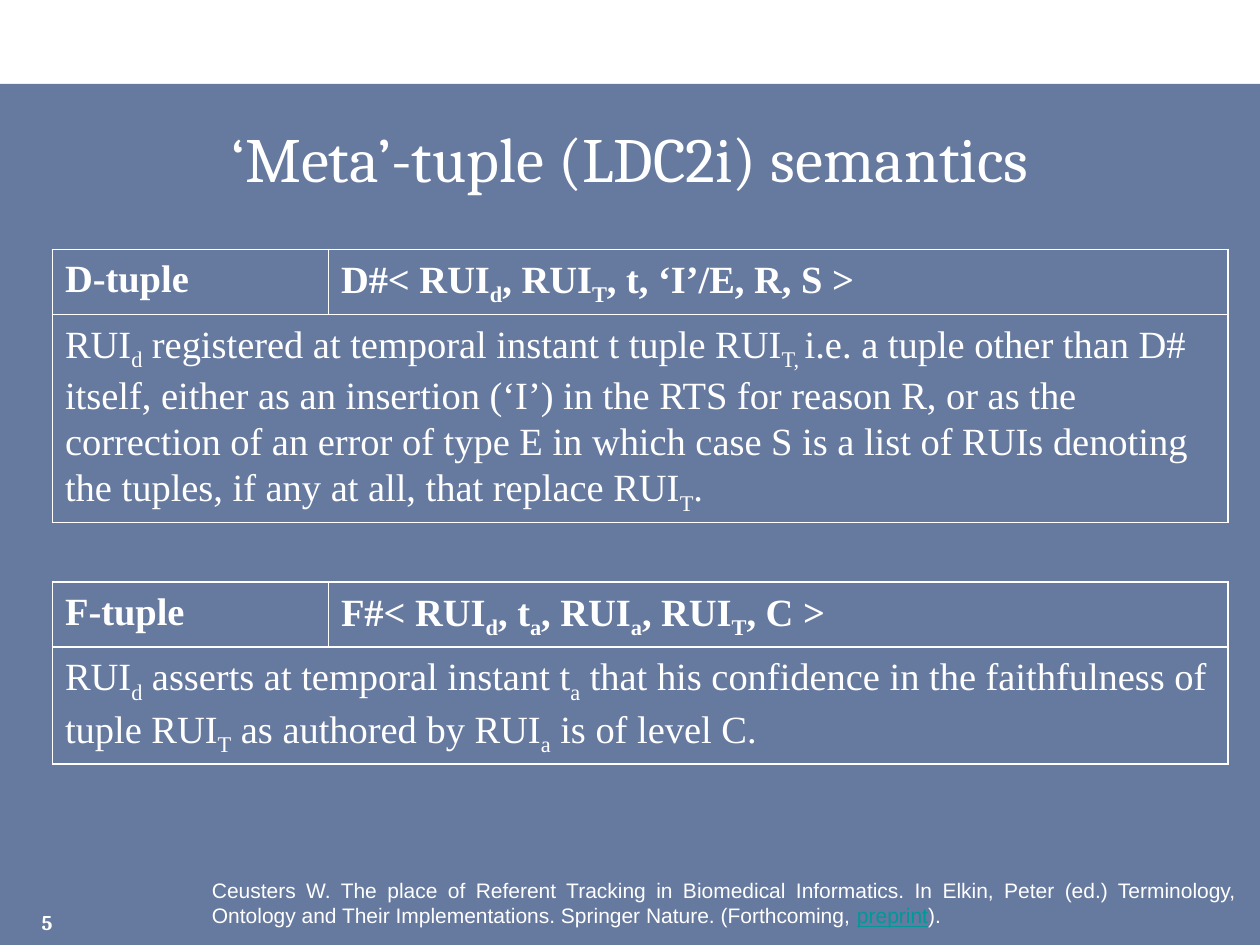
from lxml.etree import SubElement
from pptx import Presentation
from pptx.dml.color import RGBColor
from pptx.enum.shapes import MSO_SHAPE
from pptx.enum.text import MSO_ANCHOR, PP_ALIGN
from pptx.oxml import parse_xml
from pptx.oxml.ns import nsdecls, qn
from pptx.util import Pt

COLORS = {"white": "FFFFFF", "navy": "002060", "link": "009999"}
COLUMN_WIDTHS = [157.7, 514.1]
ROW_HEIGHTS = [37.1, 118.9, 34.2, 37.1, 66.9]
TUPLES = {
    0: (
        "D-tuple",
        "D#< RUI|d|, RUI|T|, t, ‘I’/E, R, S >",
        "RUI|d| registered at temporal instant t tuple RUI|T, |i.e. a tuple other "
        "than D# itself, either as an insertion (‘I’) in the RTS for reason R, or as "
        "the correction of an error of type E in which case S is a list of RUIs "
        "denoting the tuples, if any at all, that replace RUI|T|.",
    ),
    3: (
        "F-tuple",
        "F#< RUI|d|, t|a|, RUI|a|, RUI|T|, C >",
        "RUI|d| asserts at temporal instant t|a| that his confidence in the "
        "faithfulness of tuple RUI|T| as authored by RUI|a| is of level C.",
    ),
}
SPACER_ROW = 2


def color(name):
    return RGBColor.from_string(COLORS[name])


def style(font, name, size, bold=False):
    font.name = name
    font.size = Pt(size)
    font.bold = bold
    font.color.rgb = color("white")


def add_backdrop(slide, left, top, width, height):
    shape = slide.shapes.add_shape(
        MSO_SHAPE.RECTANGLE, Pt(left), Pt(top), Pt(width), Pt(height)
    )
    shape.shadow.inherit = False
    shape.line.fill.background()
    shape.fill.solid()
    shape.fill.fore_color.rgb = color("navy")
    fill_color = shape.fill._xPr.find(qn("a:solidFill"))[0]
    SubElement(fill_color, qn("a:alpha"), val="60000")
    slide.shapes._spTree.insert(2, shape._element)


def place_title(slide, left, top, width, height):
    title = slide.shapes.title
    title.left, title.top = Pt(left), Pt(top)
    title.width, title.height = Pt(width), Pt(height)
    frame = title.text_frame
    frame.text = "‘Meta’-tuple (LDC2i) semantics"
    frame.vertical_anchor = MSO_ANCHOR.MIDDLE
    paragraph = frame.paragraphs[0]
    paragraph.alignment = PP_ALIGN.CENTER
    style(paragraph.font, "Cambria", 36)


def set_borders(cell, visible_sides):
    properties = cell._tc.get_or_add_tcPr()
    for index, side in enumerate("LRTB"):
        if side in visible_sides:
            paint = f'<a:solidFill><a:srgbClr val="{COLORS["white"]}"/></a:solidFill>'
        else:
            paint = "<a:noFill/>"
        line = f'<a:ln{side} {nsdecls("a")} w="{Pt(1)}">{paint}</a:ln{side}>'
        properties.insert(index, parse_xml(line))


def write_cell(cell, text, bold):
    paragraph = cell.text_frame.paragraphs[0]
    paragraph.alignment = PP_ALIGN.LEFT
    paragraph.line_spacing = 1.07
    style(paragraph.font, "Times New Roman", 22, bold)
    for index, part in enumerate(text.split("|")):
        run = paragraph.add_run()
        run.text = part
        if index % 2:
            run.font._element.set("baseline", "-25000")


def add_tuple_table(slide, left, top):
    table = slide.shapes.add_table(
        len(ROW_HEIGHTS), len(COLUMN_WIDTHS), Pt(left), Pt(top),
        Pt(sum(COLUMN_WIDTHS)), Pt(sum(ROW_HEIGHTS)),
    ).table
    table.first_row = table.horz_banding = False
    for column, width in zip(table.columns, COLUMN_WIDTHS):
        column.width = Pt(width)
    for index, (row, height) in enumerate(zip(table.rows, ROW_HEIGHTS)):
        row.height = Pt(height)
        for cell in row.cells:
            cell.fill.background()
            set_borders(cell, "TB" if index == SPACER_ROW else "LRTB")
    for row, (name, syntax, meaning) in TUPLES.items():
        write_cell(table.cell(row, 0), name, True)
        write_cell(table.cell(row, 1), syntax, True)
        table.cell(row + 1, 0).merge(table.cell(row + 1, 1))
        write_cell(table.cell(row + 1, 0), meaning, False)


def add_slide_number(slide, left, top, width, height):
    box = slide.shapes.add_textbox(Pt(left), Pt(top), Pt(width), Pt(height))
    frame = box.text_frame
    frame.word_wrap = True
    frame.vertical_anchor = MSO_ANCHOR.BOTTOM
    frame.margin_left = frame.margin_right = 0
    frame.margin_top = frame.margin_bottom = 0
    frame.text = "5"
    paragraph = frame.paragraphs[0]
    paragraph.alignment = PP_ALIGN.RIGHT
    style(paragraph.font, "Cambria", 12, True)


def add_citation(slide, left, top, width, height):
    box = slide.shapes.add_textbox(Pt(left), Pt(top), Pt(width), Pt(height))
    frame = box.text_frame
    frame.word_wrap = True
    paragraph = frame.paragraphs[0]
    paragraph.alignment = PP_ALIGN.JUSTIFY
    style(paragraph.font, "Arial", 12)
    paragraph.add_run().text = (
        "Ceusters W. The place of Referent Tracking in Biomedical Informatics. "
        "In Elkin, Peter (ed.) Terminology, Ontology and Their Implementations. "
        "Springer Nature. (Forthcoming, "
    )
    link = paragraph.add_run()
    link.text = "preprint"
    link.font.underline = True
    link.font.color.rgb = color("link")
    paragraph.add_run().text = ")."


def main():
    presentation = Presentation()
    presentation.slide_width, presentation.slide_height = Pt(720), Pt(540)
    slide = presentation.slides.add_slide(presentation.slide_layouts[5])
    add_backdrop(slide, 0, 48, 720, 492)
    place_title(slide, 18, 60, 684, 60)
    add_tuple_table(slide, 30, 142.5)
    add_slide_number(slide, 0, 522, 30, 12)
    add_citation(slide, 114, 498, 600, 36)
    presentation.save("out.pptx")


if __name__ == "__main__":
    main()
